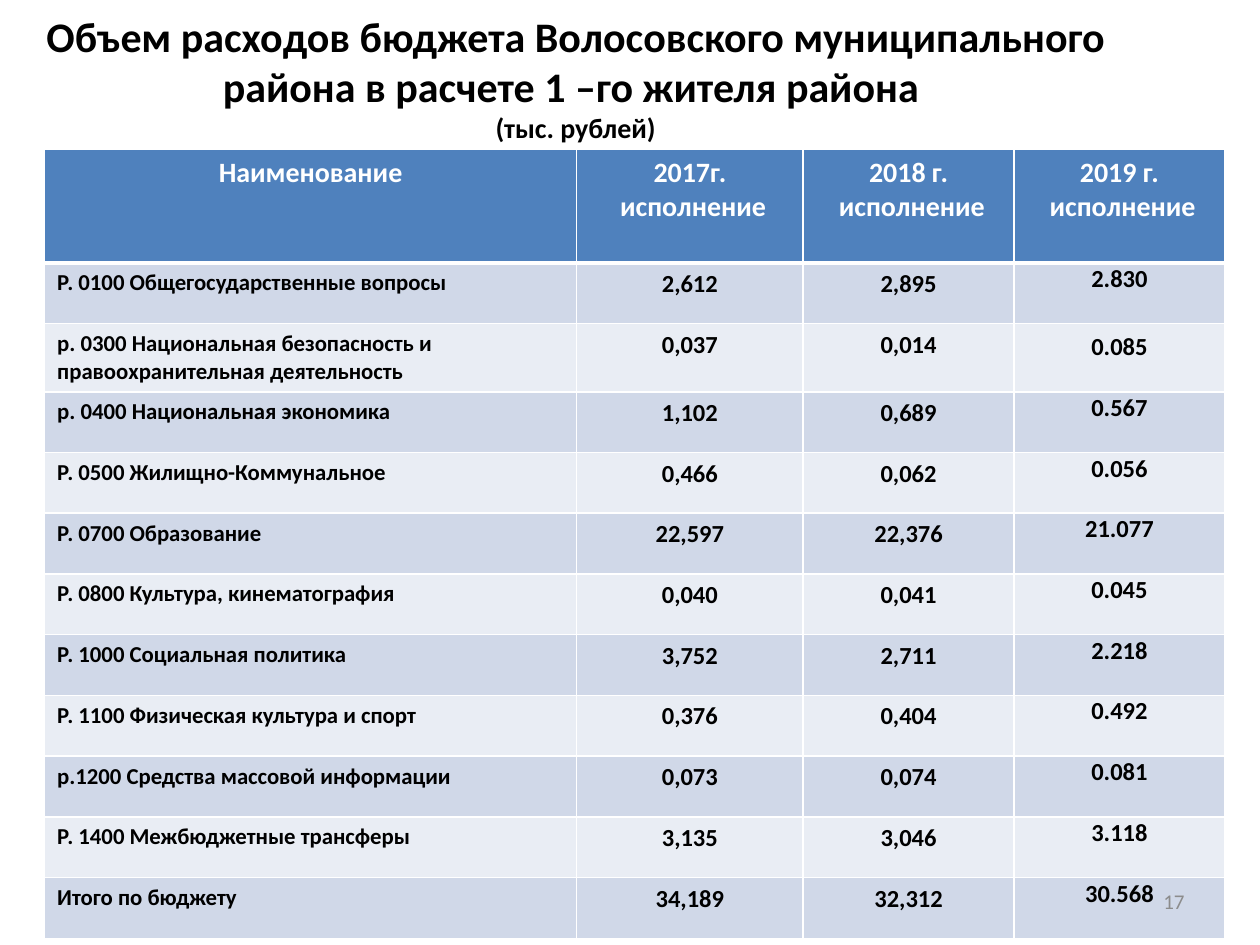
"""Builds the slide on district budget spending per resident."""
from dataclasses import dataclass

from lxml.etree import SubElement
from pptx import Presentation
from pptx.dml.color import RGBColor
from pptx.enum.text import MSO_ANCHOR, PP_ALIGN
from pptx.oxml.ns import qn
from pptx.util import Pt


@dataclass(frozen=True)
class Theme:
    font: str = "Calibri"
    ink: str = "000000"
    paper: str = "FFFFFF"
    header: str = "4F81BD"
    bands: tuple = ("D0D8E8", "E9EDF4")
    muted: str = "8C8C8C"
    title_size: int = 24
    header_size: int = 16
    value_size: int = 14
    name_size: int = 13
    number_size: int = 12
    rule: int = 1
    header_rule: int = 3


class BudgetSlide:
    def __init__(self, deck, theme):
        self.theme = theme
        self.slide = deck.slides.add_slide(deck.slide_layouts[6])

    def add_run(self, paragraph, text, size, color, bold=True):
        run = paragraph.add_run()
        run.text = text
        run.font.name = self.theme.font
        run.font.size = Pt(size)
        run.font.bold = bold
        run.font.color.rgb = RGBColor.from_string(color)

    def add_box(self, left, top, width, height, align):
        box = self.slide.shapes.add_textbox(Pt(left), Pt(top), Pt(width), Pt(height))
        frame = box.text_frame
        frame.word_wrap = True
        frame.vertical_anchor = MSO_ANCHOR.MIDDLE
        frame.paragraphs[0].alignment = align
        return frame.paragraphs[0]

    def add_title(self, heading, unit):
        title = self.add_box(5, 0, 648, 88.5, PP_ALIGN.CENTER)
        self.add_run(title, heading, self.theme.title_size, self.theme.ink)
        title.add_line_break()
        self.add_run(title, unit, self.theme.header_size, self.theme.ink)

    def add_page_number(self, number):
        page = self.add_box(516, 500.5, 168, 28.75, PP_ALIGN.RIGHT)
        self.add_run(page, number, self.theme.number_size, self.theme.muted, bold=False)

    def set_borders(self, cell, top, bottom):
        sides = {"L": self.theme.rule, "R": self.theme.rule, "T": top, "B": bottom}
        properties = cell._tc.get_or_add_tcPr()
        for position, (side, width) in enumerate(sides.items()):
            line = SubElement(properties, qn(f"a:ln{side}"), w=str(Pt(width)))
            fill = SubElement(line, qn("a:solidFill"))
            SubElement(fill, qn("a:srgbClr"), val=self.theme.paper)
            properties.insert(position, line)

    def fill_cell(self, cell, lines, size, color, fill, align):
        cell.fill.solid()
        cell.fill.fore_color.rgb = RGBColor.from_string(fill)
        for index, line in enumerate(lines):
            frame = cell.text_frame
            paragraph = frame.add_paragraph() if index else frame.paragraphs[0]
            paragraph.alignment = align
            self.add_run(paragraph, line, size, color)

    def add_table(self, left, top, widths, heights, headings, records):
        theme = self.theme
        table = self.slide.shapes.add_table(
            len(heights), len(widths), Pt(left), Pt(top), Pt(sum(widths)), Pt(sum(heights))
        ).table
        table.first_row = table.horz_banding = False
        for column, width in zip(table.columns, widths):
            column.width = Pt(width)
        for row, height in zip(table.rows, heights):
            row.height = Pt(height)
        for column, lines in enumerate(headings):
            cell = table.cell(0, column)
            self.fill_cell(cell, lines, theme.header_size, theme.paper, theme.header, PP_ALIGN.CENTER)
            self.set_borders(cell, theme.rule, theme.header_rule)
        for row, record in enumerate(records, 1):
            band = theme.bands[(row - 1) % 2]
            for column, text in enumerate(record):
                cell = table.cell(row, column)
                size = theme.value_size if column else theme.name_size
                align = PP_ALIGN.CENTER if column else PP_ALIGN.LEFT
                self.fill_cell(cell, [text], size, theme.ink, band, align)
                self.set_borders(cell, theme.header_rule if row == 1 else theme.rule, theme.rule)
            self.raise_latest(cell)

    def raise_latest(self, cell):
        cell.vertical_anchor = MSO_ANCHOR.BOTTOM
        cell.margin_left = cell.margin_right = cell.margin_top = Pt(0.5)
        cell.margin_bottom = Pt(17)


HEADINGS = [["Наименование"]] + [[year, " исполнение"] for year in ("2017г.", "2018 г.", "2019 г.")]
SPENDING = [
    ("Р. 0100 Общегосударственные вопросы", "2,612", "2,895", "2.830"),
    ("р. 0300 Национальная безопасность и правоохранительная деятельность", "0,037", "0,014", "0.085"),
    ("р. 0400 Национальная экономика", "1,102", "0,689", "0.567"),
    ("Р. 0500 Жилищно-Коммунальное", "0,466", "0,062", "0.056"),
    ("Р. 0700 Образование", "22,597", "22,376", "21.077"),
    ("Р. 0800 Культура, кинематография", "0,040", "0,041", "0.045"),
    ("Р. 1000 Социальная политика", "3,752", "2,711", "2.218"),
    ("Р. 1100 Физическая культура и спорт", "0,376", "0,404", "0.492"),
    ("р.1200 Средства массовой информации", "0,073", "0,074", "0.081"),
    ("Р. 1400 Межбюджетные трансферы", "3,135", "3,046", "3.118"),
    ("Итого по бюджету", "34,189", "32,312", "30.568"),
]


def main():
    deck = Presentation()
    deck.slide_width, deck.slide_height = Pt(720), Pt(540)
    budget = BudgetSlide(deck, Theme())
    budget.add_title(
        "Объем расходов бюджета Волосовского муниципального района в расчете 1 –го жителя района ",
        "(тыс. рублей)",
    )
    heights = [65, 34.7, 38.9] + [34.7] * (len(SPENDING) - 2)
    budget.add_table(25.5, 85.3, [304, 129.5, 120.5, 120.5], heights, HEADINGS, SPENDING)
    budget.add_page_number("17")
    deck.save("out.pptx")


if __name__ == "__main__":
    main()
